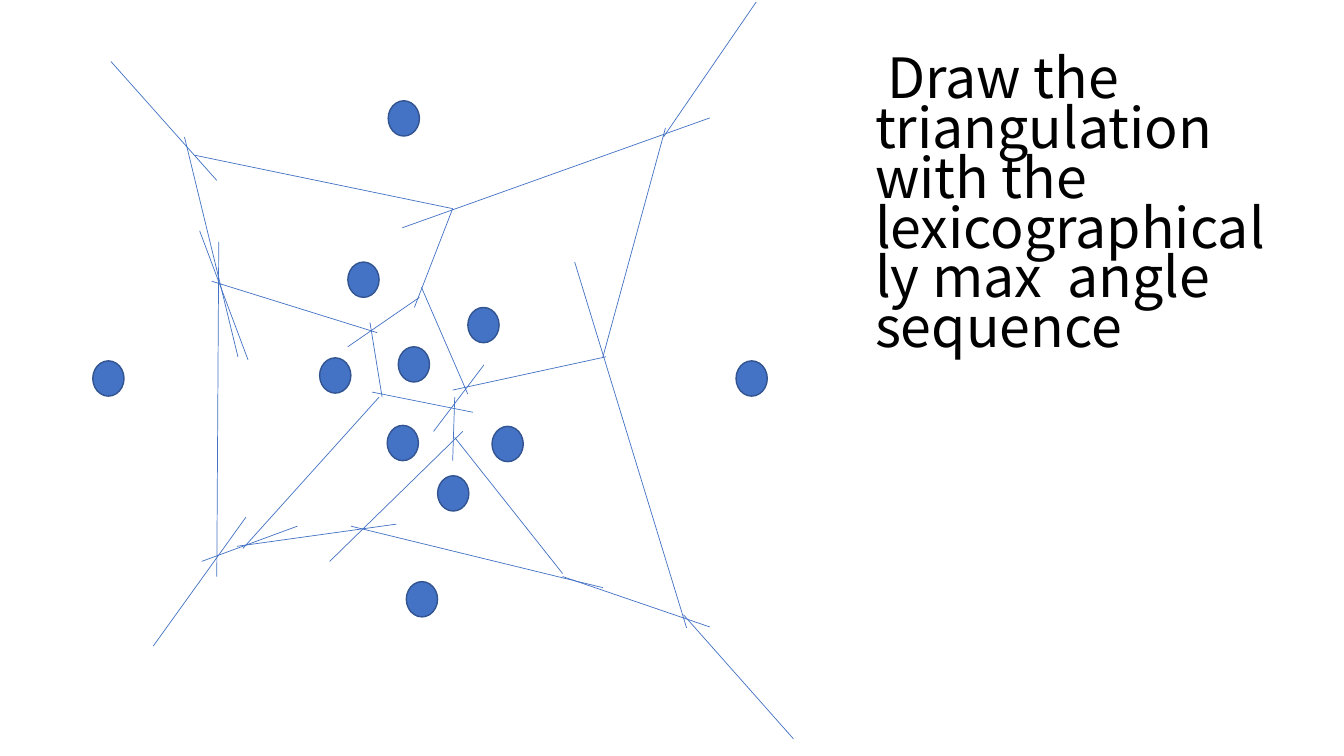
from dataclasses import dataclass

from pptx import Presentation
from pptx.dml.color import RGBColor
from pptx.enum import shapes, text
from pptx.oxml import ns
from pptx.util import Inches, Pt
from lxml import etree


@dataclass(frozen=True)
class Theme:
    font: str = "Noto Sans CJK JP"
    title_size: float = 39.6
    title_spacing: float = 0.75
    ink: RGBColor = RGBColor(0x00, 0x00, 0x00)
    blue: RGBColor = RGBColor(0x44, 0x72, 0xC4)
    outline: RGBColor = RGBColor(0x32, 0x54, 0x91)
    outline_width: float = 1
    edge_width: float = 0.5
    site_width: float = 0.31
    site_height: float = 0.35


class Diagram:
    def __init__(self, slide, theme):
        self.slide = slide
        self.theme = theme

    def title(self, left, top, width, height, words):
        box = self.slide.shapes.add_textbox(
            Inches(left), Inches(top), Inches(width), Inches(height))
        frame = box.text_frame
        frame.word_wrap = True
        frame.vertical_anchor = text.MSO_ANCHOR.MIDDLE
        paragraph = frame.paragraphs[0]
        paragraph.text = words
        paragraph.line_spacing = self.theme.title_spacing
        paragraph.font.name = self.theme.font
        paragraph.font.size = Pt(self.theme.title_size)
        paragraph.font.color.rgb = self.theme.ink

    def site(self, left, top):
        shape = self.slide.shapes.add_shape(
            shapes.MSO_SHAPE.OVAL, Inches(left), Inches(top),
            Inches(self.theme.site_width), Inches(self.theme.site_height))
        shape.shadow.inherit = False
        shape.fill.solid()
        shape.fill.fore_color.rgb = self.theme.blue
        shape.line.color.rgb = self.theme.outline
        shape.line.width = Pt(self.theme.outline_width)

    def edge(self, *ends):
        connector = self.slide.shapes.add_connector(
            shapes.MSO_CONNECTOR.STRAIGHT, *map(Inches, ends))
        connector.line.color.rgb = self.theme.blue
        connector.line.width = Pt(self.theme.edge_width)
        etree.SubElement(connector._element.spPr, ns.qn("a:effectLst"))


SITES = [
    (0.92, 3.58), (3.85, 1), (7.3, 3.58), (3.17, 3.55),
    (3.45, 2.6), (4.64, 3.05), (3.95, 3.44), (3.84, 4.22),
    (4.03, 5.77), (4.88, 4.23), (4.34, 4.72),
]

VORONOI_EDGES = [
    (1.1, 0.61, 2.15, 1.79),
    (2.17, 2.4, 2.15, 5.72),
    (7.5, 0.02, 6.58, 1.36),
    (6.78, 6.1, 7.87, 7.33),
    (3.48, 5.22, 5.98, 5.83),
    (5.7, 2.6, 6.81, 6.23),
    (3.99, 2.26, 7.04, 1.17),
    (6.6, 1.27, 5.98, 3.54),
    (6.01, 3.54, 4.49, 3.87),
    (4.11, 3.05, 4.49, 2.07),
    (1.93, 1.54, 4.49, 2.07),
    (4.18, 2.85, 4.64, 3.91),
    (2.1, 2.79, 3.74, 3.3),
    (2.36, 3.54, 1.83, 1.36),
    (3.45, 3.44, 4.16, 2.95),
    (3.67, 3.2, 3.79, 3.94),
    (3.76, 3.94, 2.41, 5.44),
    (2.44, 5.13, 1.52, 6.41),
    (3.69, 3.89, 4.69, 4.09),
    (4.59, 4.28, 3.27, 5.57),
    (5.58, 5.69, 4.51, 4.34),
    (5.58, 5.72, 7.04, 6.22),
    (4.49, 4.57, 4.51, 3.94),
    (4.8, 3.62, 4.3, 4.28),
    (2.35, 5.42, 3.93, 5.2),
    (2, 5.57, 2.95, 5.22),
    (1.98, 2.29, 2.46, 3.57),
]


def main():
    presentation = Presentation()
    presentation.slide_width = Inches(13.33)
    presentation.slide_height = Inches(7.5)
    slide = presentation.slides.add_slide(presentation.slide_layouts[6])
    diagram = Diagram(slide, Theme())
    diagram.title(8.58, 1.34, 4.18, 1.45,
                  " Draw the triangulation with the \v"
                  "lexicographically max  angle sequence")
    for site in SITES:
        diagram.site(*site)
    for edge in VORONOI_EDGES:
        diagram.edge(*edge)
    presentation.save("out.pptx")


if __name__ == "__main__":
    main()
